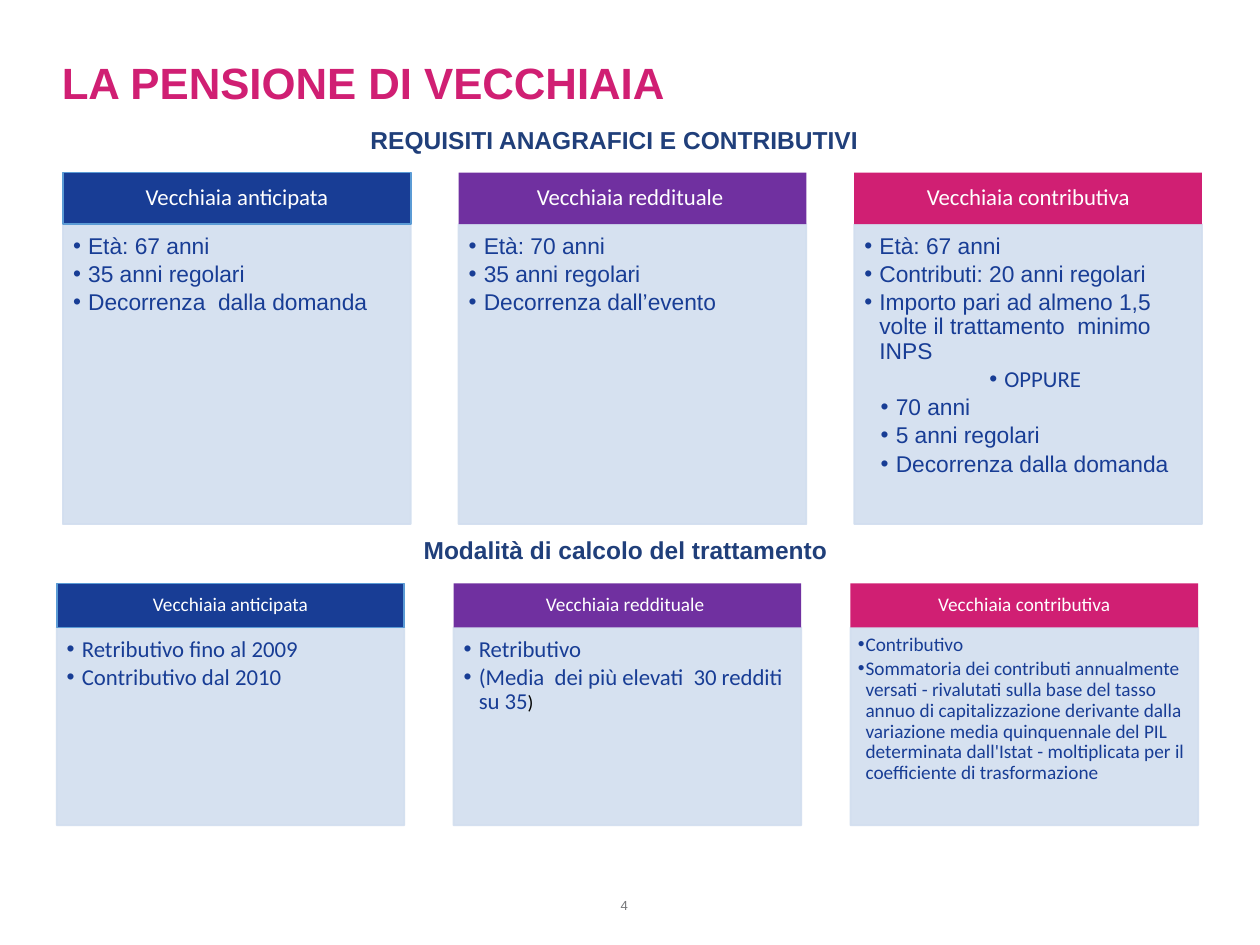
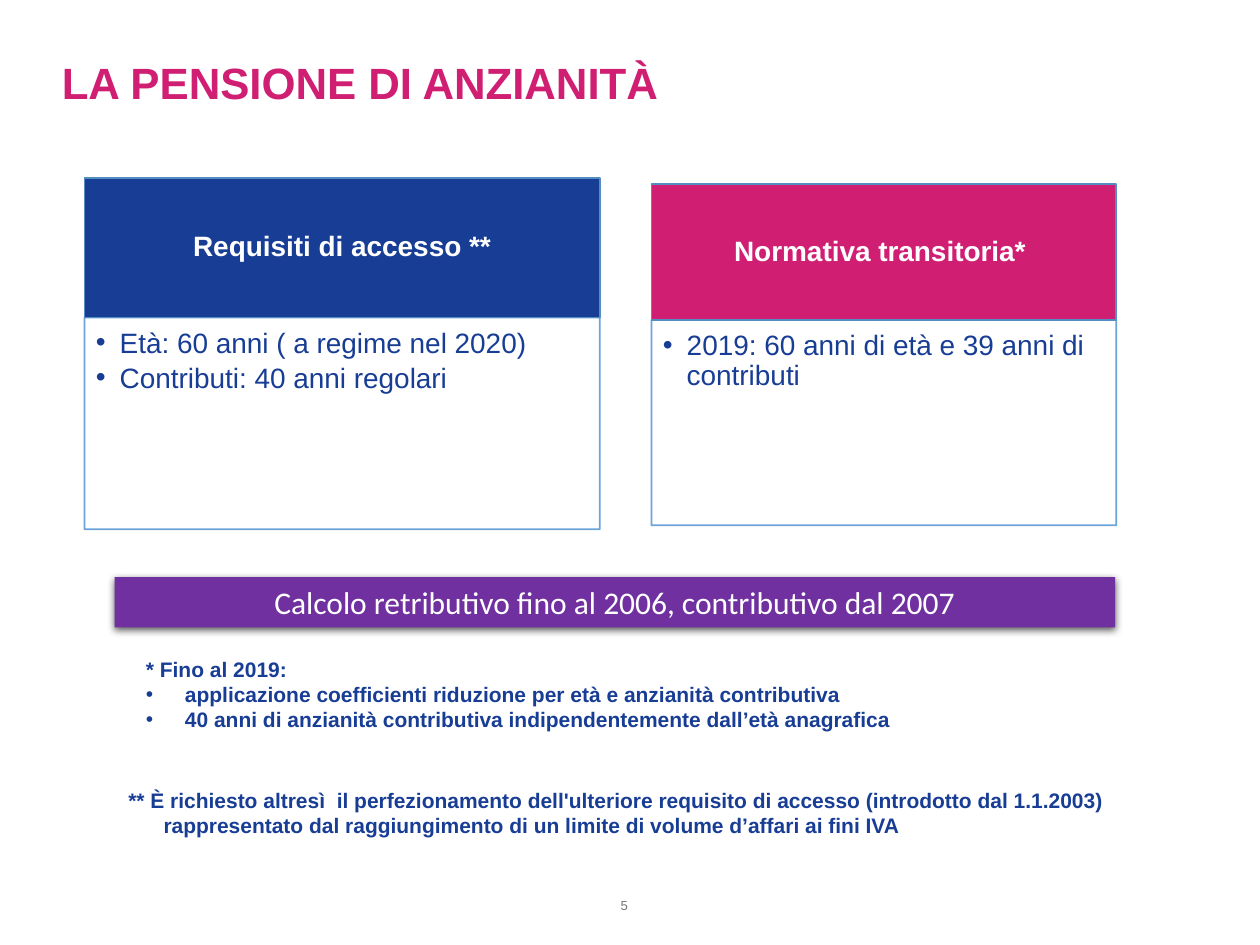
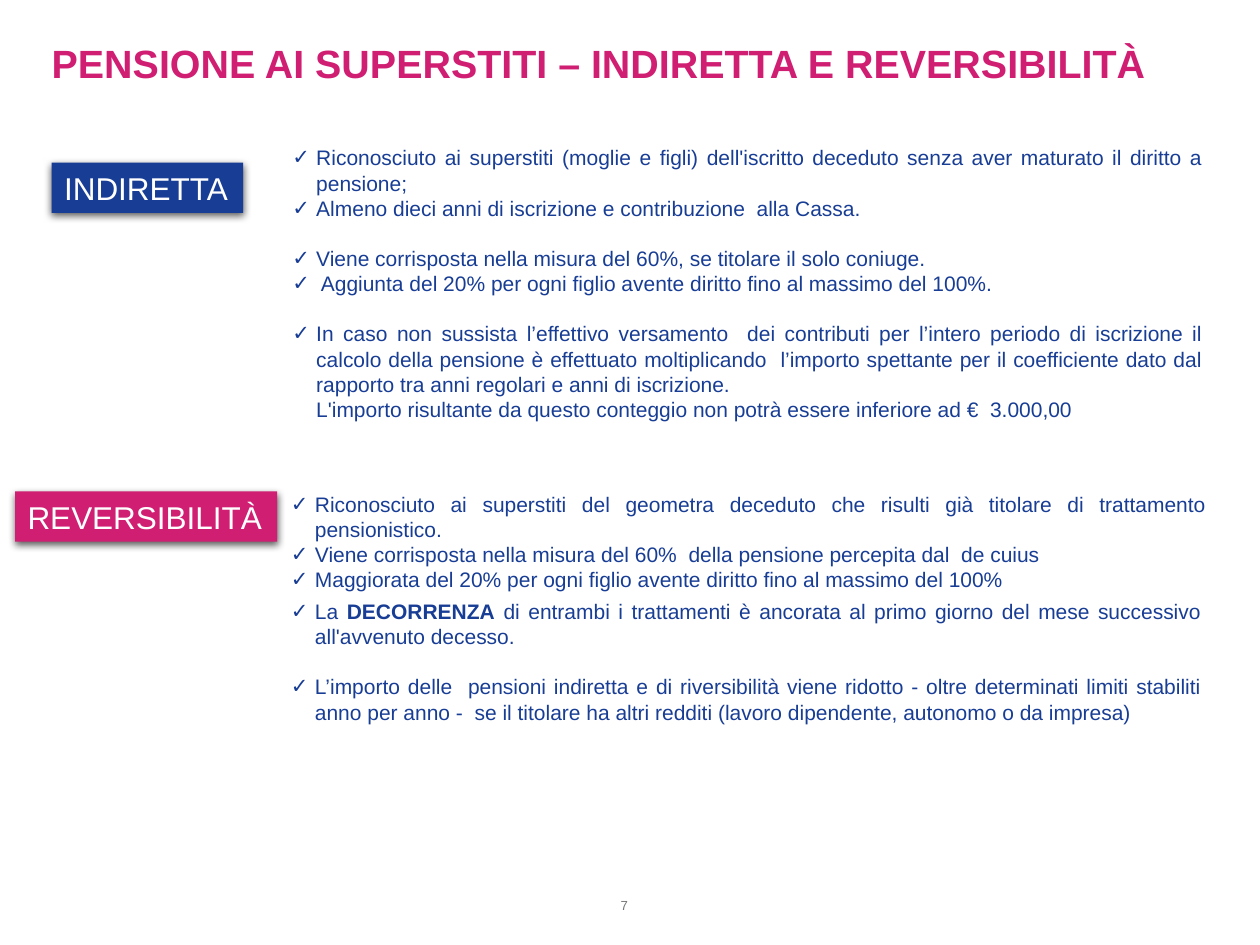
"""Build three slides on old-age, seniority and survivors' pensions."""
from lxml.etree import SubElement
from pptx import Presentation
from pptx.dml.color import RGBColor
from pptx.enum.shapes import MSO_SHAPE
from pptx.enum.text import MSO_ANCHOR, MSO_AUTO_SIZE, PP_ALIGN
from pptx.oxml.ns import qn
from pptx.util import Inches, Pt

BLUE = RGBColor(0x18, 0x3D, 0x95)
PURPLE = RGBColor(0x70, 0x30, 0xA0)
MAGENTA = RGBColor(0xD0, 0x1F, 0x73)
NAVY = RGBColor(0x20, 0x3F, 0x7A)
SKY = RGBColor(0x5B, 0x9B, 0xD5)
STEEL = RGBColor(0x53, 0x8D, 0xC1)
PALE = RGBColor(0xD2, 0xDE, 0xEF)
GRAY = RGBColor(0x76, 0x77, 0x7A)
BLACK = RGBColor(0, 0, 0)
WHITE = RGBColor(255, 255, 255)

SLIDE_WIDTH, SLIDE_HEIGHT = 10, 7.5
NO_INSETS = (0, 0, 0, 0)
TEXT_INSETS = (0.1, 0.05, 0.1, 0.05)
BODY_INSETS = (0.08, 0.08, 0.1, 0.11)
CARD_WIDTH = 2.76

TITLE = {"size": 25, "color": MAGENTA, "bold": True, "line_spacing": Pt(30), "alignment": PP_ALIGN.LEFT}
SUBTITLE = {"size": 14, "color": NAVY, "bold": True, "alignment": PP_ALIGN.CENTER}
NUMBER = {"size": 7.5, "color": GRAY, "alignment": PP_ALIGN.CENTER}
HEADER = {"color": WHITE, "alignment": PP_ALIGN.CENTER, "line_spacing": 0.9}
BODY = {"size": 13, "color": BLUE, "alignment": PP_ALIGN.LEFT, "line_spacing": 0.9, "bullet": "•",
        "indent": 0.12, "hang": 0.12, "space_after": Pt(2)}
NOTE = {"size": 12, "color": BLUE, "bold": True}
CHECK = {"size": 12, "color": BLUE, "alignment": PP_ALIGN.JUSTIFY, "bullet": "✓", "indent": 0.19, "hang": 0.19}
LABEL = {"size": 18, "color": WHITE}

CALIBRI = {"name": "Calibri"}
NESTED = {"indent": 0.25}
DOT = {"bullet": "•", "indent": 0.31, "hang": 0.31}
GAP = {"space_before": Pt(14.3)}

CARD_KINDS = [
    ("Vecchiaia anticipata", BLUE, SKY),
    ("Vecchiaia reddituale ", PURPLE, None),
    ("Vecchiaia contributiva", MAGENTA, None),
]
REQUIREMENTS = [
    ["Età: 67 anni", "35 anni regolari", "Decorrenza  dalla domanda"],
    ["Età: 70 anni", "35 anni regolari", "Decorrenza dall’evento"],
    ["Età: 67 anni", "Contributi: 20 anni regolari",
     "Importo pari ad almeno 1,5 volte il trattamento  minimo INPS",
     ("OPPURE", NESTED | CALIBRI | {"alignment": PP_ALIGN.CENTER}),
     ("70 anni", NESTED), ("5 anni regolari", NESTED), ("Decorrenza dalla domanda", NESTED)],
]
CALCULATIONS = [
    ["Retributivo fino al 2009", "Contributivo dal 2010"],
    ["Retributivo",
     ([("(Media  dei più elevati  30 redditi su 35", {}), (")", {"size": 11, "color": BLACK})], {})],
    ["Contributivo",
     "Sommatoria dei contributi annualmente versati - rivalutati sulla base del tasso annuo di "
     "capitalizzazione derivante dalla variazione media quinquennale del PIL determinata dall'Istat - "
     "moltiplicata per il coefficiente di trasformazione"],
]
SMALL_BODY = {"size": 11, "indent": 0.06, "hang": 0.06, "space_after": Pt(1.9)}
SMALL_INSETS = (0.06, 0.06, 0.09, 0.1)
CARD_ROWS = [
    {"left": 0.5, "step": 3.14, "top": 1.37, "heights": (0.41, 2.38), "header": 13, "bodies": REQUIREMENTS,
     "styles": [({}, BODY_INSETS)] * 3},
    {"left": 0.45, "step": 3.15, "top": 4.63, "heights": (0.35, 1.57), "header": 11, "bodies": CALCULATIONS,
     "styles": [(CALIBRI, BODY_INSETS)] * 2 + [(CALIBRI | SMALL_BODY, SMALL_INSETS)]},
]
SUBTITLES = [
    ("REQUISITI ANAGRAFICI E CONTRIBUTIVI", (2.64, 0.99, 4.57, 0.37)),
    ("Modalità di calcolo del trattamento", (2.93, 4.25, 4.17, 0.34)),
]

ACCESS_CARDS = [
    ("Requisiti di accesso **", BLUE, (0.67, 1.41, 4.09), (1.11, 1.68),
     ["Età: 60 anni ( a regime nel 2020)", "Contributi: 40 anni regolari"]),
    ("Normativa transitoria* ", MAGENTA, (5.17, 1.46, 3.69), (1.08, 1.63),
     ["2019: 60 anni di età e 39 anni di contributi"]),
]
ACCESS_BODY = BODY | {"size": 16, "indent": 0.19, "hang": 0.19, "space_after": Pt(2.8)}
FOOTNOTES = [
    ((1.06, 5.16, 7.94, 0.91),
     ["* Fino al 2019:",
      ("applicazione coefficienti riduzione per età e anzianità contributiva", DOT),
      ("40 anni di anzianità contributiva indipendentemente dall’età anagrafica", DOT)]),
    ((0.92, 6.2, 8.33, 0.5),
     ["** È richiesto altresì  il perfezionamento dell'ulteriore requisito di accesso (introdotto dal 1.1.2003)",
      ("rappresentato dal raggiungimento di un limite di volume d’affari ai fini IVA", {"indent": 0.28})]),
]

SURVIVOR_LABELS = [
    ("INDIRETTA", BLUE, (0.41, 1.29, 1.52, 0.4)),
    ("REVERSIBILITÀ", MAGENTA, (0.12, 3.9, 2.08, 0.4)),
]
SURVIVOR_TEXTS = [
    ((2.32, 1.15, 7.23, 2.22),
     ["Riconosciuto ai superstiti (moglie e figli) dell'iscritto deceduto senza aver maturato il diritto a pensione;",
      "Almeno dieci anni di iscrizione e contribuzione  alla Cassa.",
      ("Viene corrisposta nella misura del 60%, se titolare il solo coniuge.", GAP),
      " Aggiunta del 20% per ogni figlio avente diritto fino al massimo del 100%.",
      ("In caso non sussista l’effettivo versamento  dei contributi per l’intero periodo di iscrizione il "
       "calcolo della pensione è effettuato moltiplicando  l’importo spettante per il coefficiente dato dal "
       "rapporto tra anni regolari e anni di iscrizione.", GAP),
      ("L'importo risultante da questo conteggio non potrà essere inferiore ad €  3.000,00",
       {"bullet": None, "hang": 0})]),
    ((2.31, 3.9, 7.27, 1.01),
     ["Riconosciuto ai superstiti del geometra deceduto che risulti già titolare di trattamento pensionistico.",
      "Viene corrisposta nella misura del 60%  della pensione percepita dal  de cuius",
      "Maggiorata del 20% per ogni figlio avente diritto fino al massimo del 100%"]),
    ((2.31, 4.75, 7.23, 1.21),
     [([("La ", {}), ("DECORRENZA", {"bold": True}),
        (" di entrambi i trattamenti è ancorata al primo giorno del mese successivo all'avvenuto decesso.", {})], {}),
      ("L’importo delle  pensioni indiretta e di riversibilità viene ridotto - oltre determinati limiti "
       "stabiliti anno per anno -  se il titolare ha altri redditi (lavoro dipendente, autonomo o da impresa)",
       GAP)]),
]


def format_span(span, style):
    span.font.color.rgb = style["color"]
    values = {"size": Pt(style["size"]), "name": style.get("name", "Arial"), "bold": style.get("bold", False)}
    for attribute, value in values.items():
        setattr(span.font, attribute, value)


def format_para(para, style):
    properties = para._p.get_or_add_pPr()
    properties.set("marL", str(Inches(style.get("indent", 0))))
    properties.set("indent", str(-Inches(style.get("hang", 0))))
    if style.get("bullet"):
        SubElement(properties, qn("a:buFont"), typeface="Arial")
        SubElement(properties, qn("a:buChar"), char=style["bullet"])
    else:
        SubElement(properties, qn("a:buNone"))
    for attribute in ("alignment", "line_spacing", "space_before", "space_after"):
        if attribute in style:
            setattr(para, attribute, style[attribute])


def write(box, items, style, insets=TEXT_INSETS, anchor=MSO_ANCHOR.TOP, wrap=True):
    frame = box.text_frame
    settings = {"word_wrap": wrap, "auto_size": MSO_AUTO_SIZE.NONE, "vertical_anchor": anchor}
    settings |= {f"margin_{side}": Inches(inset)
                 for side, inset in zip(("left", "top", "right", "bottom"), insets)}
    for attribute, value in settings.items():
        setattr(frame, attribute, value)
    for index, item in enumerate(items):
        content, changes = item if isinstance(item, tuple) else (item, {})
        para = frame.paragraphs[0] if index == 0 else frame.add_paragraph()
        para_style = style | changes
        format_para(para, para_style)
        for text, span_changes in [(content, {})] if isinstance(content, str) else content:
            span = para.add_run()
            span.text = text
            format_span(span, para_style | span_changes)


def add_text(page, place, items, style, **options):
    box = page.shapes.add_textbox(*map(Inches, place))
    write(box, items, style, **options)


def add_outline_text(page, place, items, style):
    left, top, width, height = map(Inches, place)
    builder = page.shapes.build_freeform(left, top)
    builder.add_line_segments([(left + width, top), (left + width, top + height), (left, top + height)])
    box = builder.convert_to_shape()
    box.shadow.inherit = False
    box.fill.background()
    box.line.fill.background()
    write(box, items, style, NO_INSETS)


def add_rectangle(page, place, fill, line=None):
    box = page.shapes.add_shape(MSO_SHAPE.RECTANGLE, *map(Inches, place))
    box.shadow.inherit = False
    box.fill.solid()
    box.fill.fore_color.rgb = fill
    if line is None:
        box.line.fill.background()
    else:
        box.line.color.rgb = line
        box.line.width = Pt(1)
    return box


def add_card(page, corner, heights, header, body):
    left, top, width = corner
    header_height, body_height = heights
    title, fill, line, header_style = header
    items, body_fill, body_line, body_style, insets = body
    lower = add_rectangle(page, (left, top + header_height, width, body_height), body_fill, body_line)
    for color in lower.element.spPr.iter(qn("a:srgbClr")):
        SubElement(color, qn("a:alpha"), val="90000")
    write(lower, items, body_style, insets)
    upper = add_rectangle(page, (left, top, width, header_height), fill, line)
    write(upper, [title], HEADER | header_style, anchor=MSO_ANCHOR.MIDDLE)


def add_banner(page, place, text, fill, style, wrap=True):
    box = add_rectangle(page, place, fill)
    effects = box.element.spPr.find(qn("a:effectLst"))
    shadow = SubElement(effects, qn("a:outerShdw"), blurRad=str(Pt(4.5)), dist=str(Pt(1.5)),
                        dir="5400000", rotWithShape="0")
    color = SubElement(shadow, qn("a:srgbClr"), val="000000")
    SubElement(color, qn("a:alpha"), val="63000")
    write(box, [text], style, anchor=MSO_ANCHOR.MIDDLE, wrap=wrap)


def add_page(deck, title, number, place=(0.49, 0.44, 9.01, 0.82), size=25):
    page = deck.slides.add_slide(deck.slide_layouts[5])
    box = page.shapes.title
    for attribute, value in zip(("left", "top", "width", "height"), place):
        setattr(box, attribute, Inches(value))
    write(box, [title], TITLE | {"size": size}, NO_INSETS)
    add_text(page, (4.47, 7.01, 1.07, 0.4), [str(number)], NUMBER,
             insets=(0, 0, 0.1, 0.05), anchor=MSO_ANCHOR.MIDDLE)
    return page


def build_old_age(deck):
    page = add_page(deck, "LA PENSIONE DI VECCHIAIA", 4)
    for text, place in SUBTITLES:
        add_text(page, place, [text], SUBTITLE, insets=(0, 0, 0.1, 0.05))
    for row in CARD_ROWS:
        for column, (title, fill, line) in enumerate(CARD_KINDS):
            changes, insets = row["styles"][column]
            add_card(page, (row["left"] + column * row["step"], row["top"], CARD_WIDTH), row["heights"],
                     (title, fill, line, CALIBRI | {"size": row["header"]}),
                     (row["bodies"][column], PALE, PALE, BODY | changes, insets))


def build_seniority(deck):
    page = add_page(deck, "LA PENSIONE DI ANZIANITÀ", 5)
    for title, fill, corner, heights, items in ACCESS_CARDS:
        add_card(page, corner, heights, (title, fill, STEEL, {"size": 16, "bold": True}),
                 (items, WHITE, SKY, ACCESS_BODY, (0.09, 0.09, 0.12, 0.14)))
    add_banner(page, (0.91, 4.58, 7.94, 0.4), "Calcolo retributivo fino al 2006, contributivo dal 2007",
               PURPLE, LABEL | CALIBRI | {"alignment": PP_ALIGN.CENTER})
    for place, items in FOOTNOTES:
        add_text(page, place, items, NOTE)


def build_survivors(deck):
    page = add_page(deck, "PENSIONE AI SUPERSTITI – INDIRETTA E REVERSIBILITÀ", 7,
                    (0.41, 0.27, 9.23, 0.82), 22.5)
    for text, fill, place in SURVIVOR_LABELS:
        add_banner(page, place, text, fill, LABEL | {"alignment": PP_ALIGN.LEFT}, wrap=False)
    for place, items in SURVIVOR_TEXTS:
        add_outline_text(page, place, items, CHECK)


def main():
    deck = Presentation()
    deck.slide_width, deck.slide_height = Inches(SLIDE_WIDTH), Inches(SLIDE_HEIGHT)
    for build in (build_old_age, build_seniority, build_survivors):
        build(deck)
    deck.save("out.pptx")


if __name__ == "__main__":
    main()
